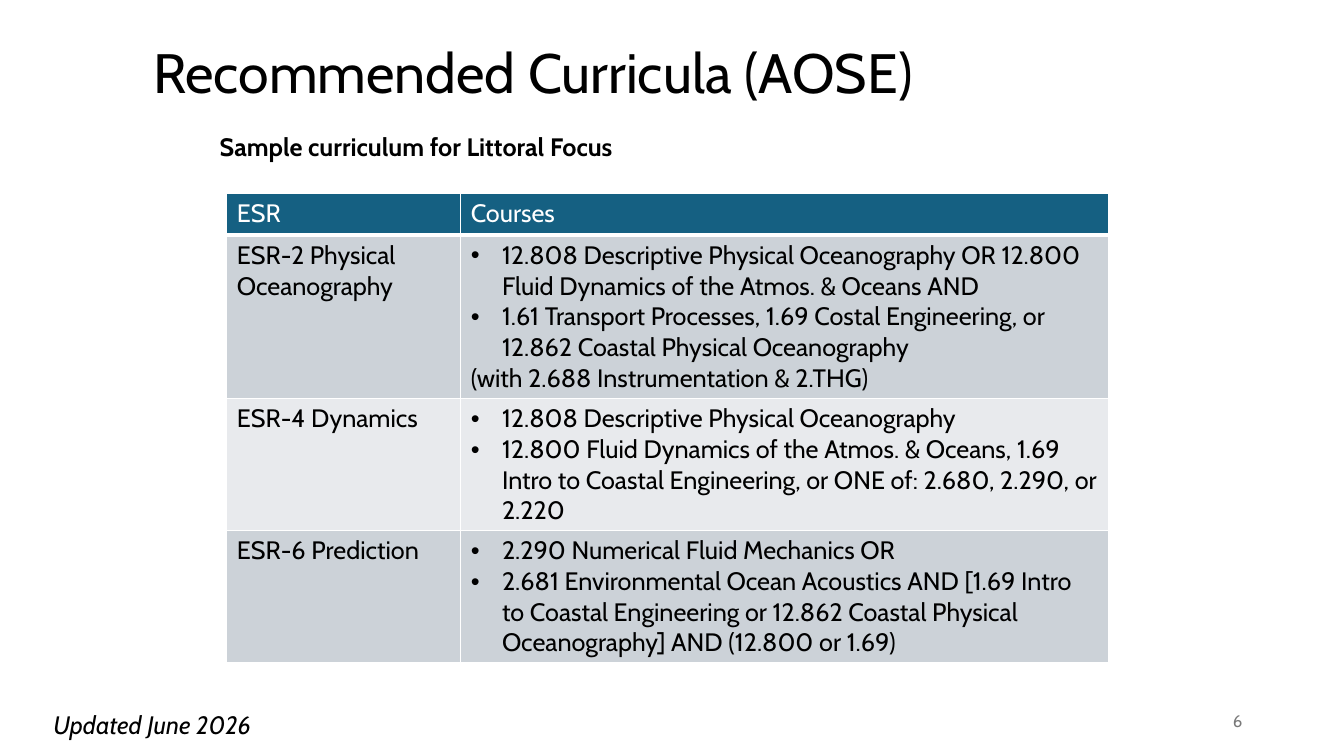
from dataclasses import dataclass

from lxml import etree
from pptx import Presentation
from pptx.dml.color import RGBColor
from pptx.enum.text import MSO_ANCHOR, PP_ALIGN
from pptx.oxml.ns import qn
from pptx.util import Inches, Pt

LEFT, RIGHT = PP_ALIGN.LEFT, PP_ALIGN.RIGHT
TOP, MIDDLE = MSO_ANCHOR.TOP, MSO_ANCHOR.MIDDLE


@dataclass(frozen=True)
class Theme:
    font: str = "Cabin"
    black: str = "000000"
    white: str = "FFFFFF"
    grey: str = "797979"
    header: str = "156082"
    bands: tuple = ("CCD2D8", "E8EAED")
    title_size: float = 39.6
    body_size: float = 18
    number_size: float = 12


theme = Theme()


def add_span(para, text, size, color, bold=False, italic=False):
    span = para.add_run()
    span.text = text
    font = span.font
    font.name, font.size = theme.font, Pt(size)
    font.bold, font.italic = bold, italic
    font.color.rgb = RGBColor.from_string(color)


def add_border(cell, side, points):
    """Draw one white edge; call before the cell is filled."""
    line = etree.SubElement(cell._tc.get_or_add_tcPr(), qn(f"a:ln{side}"), w=str(Pt(points)))
    fill = etree.SubElement(line, qn("a:solidFill"))
    etree.SubElement(fill, qn("a:srgbClr"), val=theme.white)


deck = Presentation()
deck.slide_width, deck.slide_height = Inches(13.33), Inches(7.5)
page = deck.slides.add_slide(deck.slide_layouts[6])

# Title, subtitle, date and page number
labels = [
    ("Recommended Curricula (AOSE)", (1.42, 0.41, 10, 0.67), MIDDLE, LEFT, True,
     dict(size=theme.title_size, color=theme.black)),
    ("Sample curriculum for Littoral Focus", (2.08, 1.25, 4.39, 0.4), TOP, LEFT, False,
     dict(size=theme.body_size, color=theme.black, bold=True)),
    ("Updated June 2026", (0.43, 6.99, 2.28, 0.4), TOP, LEFT, False,
     dict(size=theme.body_size, color=theme.black, italic=True)),
    ("6", (9.42, 6.95, 3, 0.4), MIDDLE, RIGHT, True,
     dict(size=theme.number_size, color=theme.grey)),
]
for text, place, anchor, align, wrap, style in labels:
    box = page.shapes.add_textbox(*map(Inches, place))
    frame = box.text_frame
    frame.word_wrap, frame.vertical_anchor = wrap, anchor
    para = frame.paragraphs[0]
    para.alignment = align
    if style["size"] == theme.title_size:
        para.line_spacing = 0.9
    add_span(para, text, **style)

# Curriculum table: a leading bullet marks a list item
BULLET = "• "
curriculum = [
    ("ESR", ["Courses"]),
    ("ESR-2 Physical Oceanography", [
        "• 12.808 Descriptive Physical Oceanography OR 12.800 Fluid Dynamics of the Atmos. & Oceans AND",
        "• 1.61 Transport Processes, 1.69 Costal Engineering, or 12.862 Coastal Physical Oceanography",
        "(with 2.688 Instrumentation & 2.THG)",
    ]),
    ("ESR-4 Dynamics", [
        "• 12.808 Descriptive Physical Oceanography",
        "• 12.800 Fluid Dynamics of the Atmos. & Oceans, 1.69 Intro to Coastal Engineering, "
        "or ONE of: 2.680, 2.290, or 2.220",
    ]),
    ("ESR-6 Prediction", [
        "• 2.290 Numerical Fluid Mechanics OR",
        "• 2.681 Environmental Ocean Acoustics AND [1.69 Intro to Coastal Engineering "
        "or 12.862 Coastal Physical Oceanography] AND (12.800 or 1.69)",
    ]),
]
column_widths = (2.32, 6.43)
row_heights = (0.41, 1.62, 1.31, 1.31)
table = page.shapes.add_table(
    len(curriculum), len(column_widths), Inches(2.25), Inches(1.92),
    Inches(sum(column_widths)), Inches(sum(row_heights))).table
table.first_row = table.horz_banding = False
for column, width in zip(table.columns, column_widths):
    column.width = Inches(width)
for row, height in zip(table.rows, row_heights):
    row.height = Inches(height)

for row_index, (requirement, courses) in enumerate(curriculum):
    is_header = row_index == 0
    fill_color = theme.header if is_header else theme.bands[(row_index - 1) % 2]
    text_color = theme.white if is_header else theme.black
    for column_index, lines in enumerate(([requirement], courses)):
        cell = table.cell(row_index, column_index)
        for side in "LRTB":
            add_border(cell, side, 3 if is_header and side == "B" else 1)
        cell.fill.solid()
        cell.fill.fore_color.rgb = RGBColor.from_string(fill_color)
        frame = cell.text_frame
        for line_index, line in enumerate(lines):
            para = frame.add_paragraph() if line_index else frame.paragraphs[0]
            if line.startswith(BULLET):
                props = para._p.get_or_add_pPr()
                props.set("marL", str(Inches(0.31)))
                props.set("indent", str(Inches(-0.31)))
                etree.SubElement(props, qn("a:buFont"), typeface="Arial")
                etree.SubElement(props, qn("a:buChar"), char=BULLET.strip())
            add_span(para, line.removeprefix(BULLET), theme.body_size, text_color)

deck.save("out.pptx")
